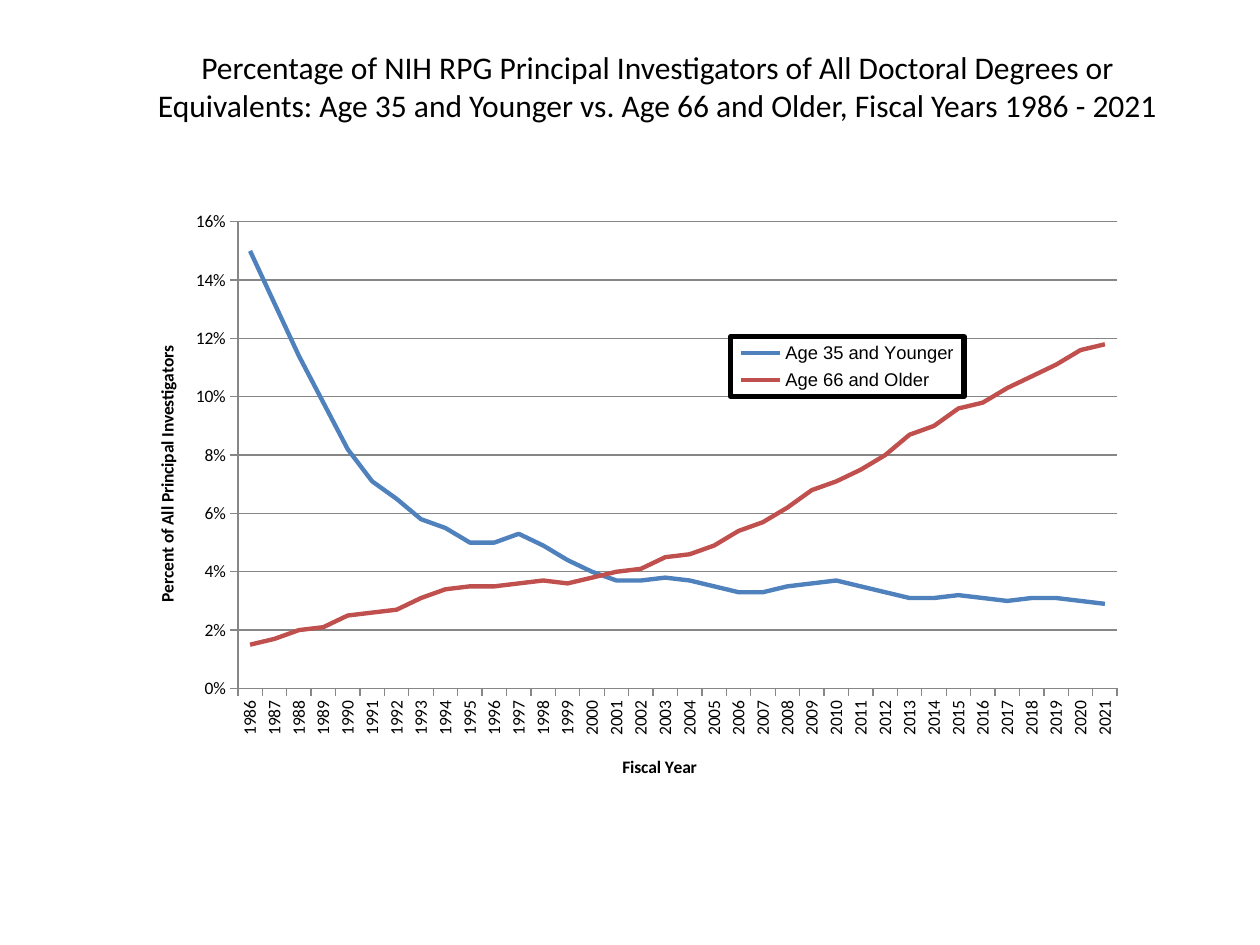
from lxml import etree
from pptx import Presentation
from pptx import util as u
from pptx.chart.data import CategoryChartData
from pptx.dml.color import RGBColor
from pptx.enum import chart as ch, text
from pptx.oxml import parse_xml
from pptx.oxml.ns import nsdecls, qn

BLACK, GREY = "000000", "868686"
YEARS = [str(y) for y in range(1986, 2022)]
SERIES = [
    ("Age 35 and Younger", "4F81BD",
     [15, 13.2, 11.4, 9.8, 8.2, 7.1, 6.5, 5.8, 5.5, 5, 5, 5.3,
      4.9, 4.4, 4, 3.7, 3.7, 3.8, 3.7, 3.5, 3.3, 3.3, 3.5, 3.6,
      3.7, 3.5, 3.3, 3.1, 3.1, 3.2, 3.1, 3, 3.1, 3.1, 3, 2.9]),
    ("Age 66 and Older", "C0504D",
     [1.5, 1.7, 2, 2.1, 2.5, 2.6, 2.7, 3.1, 3.4, 3.5, 3.5, 3.6,
      3.7, 3.6, 3.8, 4, 4.1, 4.5, 4.6, 4.9, 5.4, 5.7, 6.2, 6.8,
      7.1, 7.5, 8, 8.7, 9, 9.6, 9.8, 10.3, 10.7, 11.1, 11.6, 11.8]),
]


def rgb(code):
    return RGBColor.from_string(code)


def style(font, size=10, bold=False, color=BLACK, name="Calibri"):
    font.size, font.bold, font.name = u.Pt(size), bold, name
    font.color.rgb = rgb(color)


def write(frame, words, align=text.PP_ALIGN.CENTER, **fmt):
    para = frame.paragraphs[0]
    para.alignment = align
    run = para.add_run()
    run.text = words
    style(run.font, **fmt)


def stroke(line, color, width):
    line.color.rgb = rgb(color)
    line.width = u.Pt(width)


def place(part, index, inner=False, **spots):
    """Fix a chart part's place, in fractions of the chart."""
    for old in part.findall(qn("c:layout")):
        part.remove(old)
    layout = etree.Element(qn("c:layout"))
    manual = etree.SubElement(layout, qn("c:manualLayout"))
    rules = {"layoutTarget": "inner"} if inner else {}
    rules.update(xMode="edge", yMode="edge", **spots)
    for tag, val in rules.items():
        etree.SubElement(manual, qn("c:" + tag)).set("val", str(val))
    part.insert(index, layout)


def head(slide, x, y, w, h):
    title = slide.shapes.title
    title.left, title.top, title.width, title.height = x, y, w, h
    frame = title.text_frame
    frame.word_wrap = True
    frame.auto_size = text.MSO_AUTO_SIZE.NONE
    frame.vertical_anchor = text.MSO_ANCHOR.TOP
    write(frame, "Percentage of NIH RPG Principal Investigators of All "
          "Doctoral Degrees or Equivalents: Age 35 and Younger vs. "
          "Age 66 and Older, Fiscal Years 1986 - 2021", size=18)


def axis(ax, words, x, y):
    write(ax.axis_title.text_frame, words, bold=True)
    place(ax.axis_title._element, 1, x=x, y=y)
    ax.major_tick_mark = ch.XL_TICK_MARK.OUTSIDE
    ax.minor_tick_mark = ch.XL_TICK_MARK.NONE
    stroke(ax.format.line, GREY, 0.75)
    style(ax.tick_labels.font)


def key(chart):
    chart.has_legend = True
    legend = chart.legend
    legend.position = ch.XL_LEGEND_POSITION.RIGHT
    legend.include_in_layout = True
    style(legend.font, size=10.5, name="Arial")
    part = legend._element
    place(part, 1, x=0.6, y=0.23, w=0.23, h=0.1)
    part.find(qn("c:overlay")).addnext(parse_xml(
        f'<c:spPr {nsdecls("c", "a")}>'
        '<a:solidFill><a:srgbClr val="FFFFFF"/></a:solidFill>'
        '<a:ln w="38100"><a:solidFill><a:srgbClr val="000000"/></a:solidFill>'
        '</a:ln></c:spPr>'))


def graph(slide, x, y, w, h):
    data = CategoryChartData(number_format="0%")
    data.categories = YEARS
    for name, _, vals in SERIES:
        data.add_series(name, [round(v / 100, 3) for v in vals])
    chart = slide.shapes.add_chart(
        ch.XL_CHART_TYPE.LINE, x, y, w, h, data).chart
    chart.has_title = False
    style(chart.font)
    place(chart._chartSpace.chart.plotArea, 0, inner=True,
          x=0.114, y=0.038, w=0.867, h=0.78)

    for line, (_, color, _) in zip(chart.plots[0].series, SERIES):
        line.smooth = False
        line.marker.style = ch.XL_MARKER_STYLE.NONE
        stroke(line.format.line, color, 2.5)

    cat, val = chart.category_axis, chart.value_axis
    axis(cat, "Fiscal Year", 0.49, 0.925)
    axis(val, "Percent of All Principal Investigators", 0.03, 0.24)
    cat._element.find(qn("c:txPr")).find(qn("a:bodyPr")).set("rot", "-5400000")
    val.minimum_scale, val.maximum_scale, val.major_unit = 0, 0.16, 0.02
    val.tick_labels.number_format = "0%"
    val.tick_labels.number_format_is_linked = False
    val.has_major_gridlines = True
    stroke(val.major_gridlines.format.line, GREY, 0.75)
    key(chart)


def main():
    deck = Presentation()
    deck.slide_width, deck.slide_height = u.Inches(10), u.Inches(7.5)
    slide = deck.slides.add_slide(deck.slide_layouts[5])
    head(slide, *map(u.Inches, (1.12, 0.33, 8.2, 0.71)))
    graph(slide, *map(u.Inches, (0.97, 1.58, 8.05, 4.75)))
    deck.save("out.pptx")


if __name__ == "__main__":
    main()
